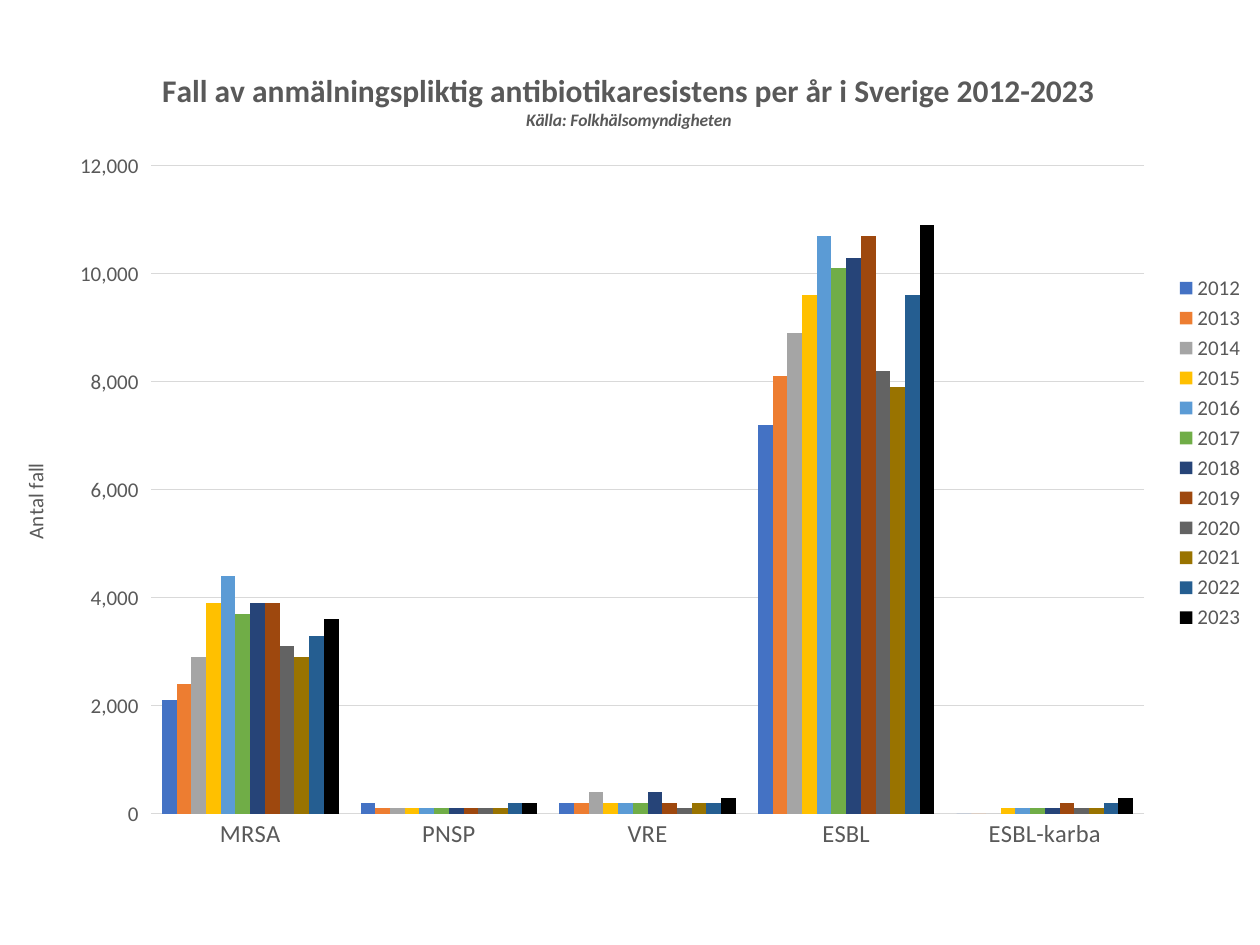
from lxml.etree import SubElement
from pptx import Presentation
from pptx.chart.data import CategoryChartData
from pptx.dml.color import RGBColor
from pptx.enum.chart import XL_CHART_TYPE as ChartType
from pptx.enum.chart import XL_LEGEND_POSITION as LegendPosition
from pptx.enum.chart import XL_TICK_MARK as TickMark
from pptx.oxml.ns import qn
from pptx.util import Inches, Pt

TEXT_GREY = RGBColor(0x59, 0x59, 0x59)
LINE_GREY = RGBColor(0xD9, 0xD9, 0xD9)
YEAR_COLORS = [
    RGBColor(0x44, 0x72, 0xC4), RGBColor(0xED, 0x7D, 0x31),
    RGBColor(0xA5, 0xA5, 0xA5), RGBColor(0xFF, 0xC0, 0x00),
    RGBColor(0x5B, 0x9B, 0xD5), RGBColor(0x70, 0xAD, 0x47),
    RGBColor(0x26, 0x44, 0x78), RGBColor(0x9E, 0x48, 0x0E),
    RGBColor(0x63, 0x63, 0x63), RGBColor(0x99, 0x73, 0x00),
    RGBColor(0x25, 0x5E, 0x91), RGBColor(0x00, 0x00, 0x00),
]
YEARS = range(2012, 2024)
CASES = {
    "MRSA": [2100, 2400, 2900, 3900, 4400, 3700, 3900, 3900, 3100, 2900, 3300, 3600],
    "PNSP": [200, 100, 100, 100, 100, 100, 100, 100, 100, 100, 200, 200],
    "VRE": [200, 200, 400, 200, 200, 200, 400, 200, 100, 200, 200, 300],
    "ESBL": [7200, 8100, 8900, 9600, 10700, 10100, 10300, 10700, 8200, 7900, 9600, 10900],
    "ESBL-karba": [0, 0, 0, 100, 100, 100, 100, 200, 100, 100, 200, 300],
}


class ChartSlide:
    font_name = "Calibri"

    def __init__(self, slide):
        self.slide = slide

    def style(self, font, size, bold=False, italic=False):
        font.name = self.font_name
        font.size = Pt(size)
        font.bold = bold
        font.italic = italic
        font.color.rgb = TEXT_GREY

    def outline(self, line):
        line.color.rgb = LINE_GREY
        line.width = Pt(0.75)

    def columns(self, left, top, width, height):
        cases = CategoryChartData(number_format="#,##0")
        cases.categories = list(CASES)
        for year, counts in zip(YEARS, zip(*CASES.values())):
            cases.add_series(str(year), counts)
        chart = self.slide.shapes.add_chart(
            ChartType.COLUMN_CLUSTERED, Inches(left), Inches(top),
            Inches(width), Inches(height), cases).chart
        chart.font.name = self.font_name
        chart.font.size = Pt(10)
        columns = chart.plots[0]
        columns.gap_width = 150
        columns.overlap = 0
        columns.vary_by_categories = False
        for series, color in zip(columns.series, YEAR_COLORS):
            series.format.fill.solid()
            series.format.fill.fore_color.rgb = color
            series.invert_if_negative = False
        return chart

    def title(self, chart, heading, source):
        chart.has_title = True
        frame = chart.chart_title.text_frame
        frame.text = f"{heading}\n{source}"
        chart.chart_title.include_in_layout = False
        self.style(frame.paragraphs[0].font, 18, bold=True)
        self.style(frame.paragraphs[1].font, 10, bold=True, italic=True)

    def axes(self, chart, case_label):
        resistance = chart.category_axis
        resistance.major_tick_mark = TickMark.NONE
        self.style(resistance.tick_labels.font, 14)
        self.outline(resistance.format.line)

        count = chart.value_axis
        count.minimum_scale, count.maximum_scale, count.major_unit = 0, 12000, 2000
        count.major_tick_mark = TickMark.OUTSIDE
        count.tick_labels.number_format = "#,##0"
        count.tick_labels.number_format_is_linked = False
        self.style(count.tick_labels.font, 12)
        count.format.line.fill.background()
        self.outline(count.major_gridlines.format.line)
        frame = count.axis_title.text_frame
        frame.text = case_label
        self.style(frame.paragraphs[0].font, 12)
        body = frame._txBody.find(qn("a:bodyPr"))
        body.set("rot", "-5400000")
        body.set("vert", "horz")

    def legend(self, chart):
        chart.has_legend = True
        chart.legend.position = LegendPosition.RIGHT
        chart.legend.include_in_layout = False
        self.style(chart.legend.font, 12)

    def plot_area(self, chart, **bounds):
        area = chart._chartSpace.chart.plotArea
        layout = area.find(qn("c:layout"))
        if layout is None:
            layout = SubElement(area, qn("c:layout"))
            area.insert(0, layout)
        manual = SubElement(layout, qn("c:manualLayout"))
        settings = {"layoutTarget": "inner", "xMode": "edge", "yMode": "edge", **bounds}
        for tag, value in settings.items():
            SubElement(manual, qn(f"c:{tag}")).set("val", str(value))


def main():
    deck = Presentation()
    deck.slide_width, deck.slide_height = Inches(10), Inches(7.5)
    page = ChartSlide(deck.slides.add_slide(deck.slide_layouts[6]))
    resistance_chart = page.columns(0, 0.34, 9.98, 6.51)
    page.title(
        resistance_chart,
        "Fall av anmälningspliktig antibiotikaresistens per år i Sverige 2012-2023",
        "Källa: Folkhälsomyndigheten")
    page.axes(resistance_chart, "Antal fall")
    page.legend(resistance_chart)
    page.plot_area(resistance_chart, x=0.12, y=0.15, w=0.79, h=0.79)
    deck.save("out.pptx")


if __name__ == "__main__":
    main()
